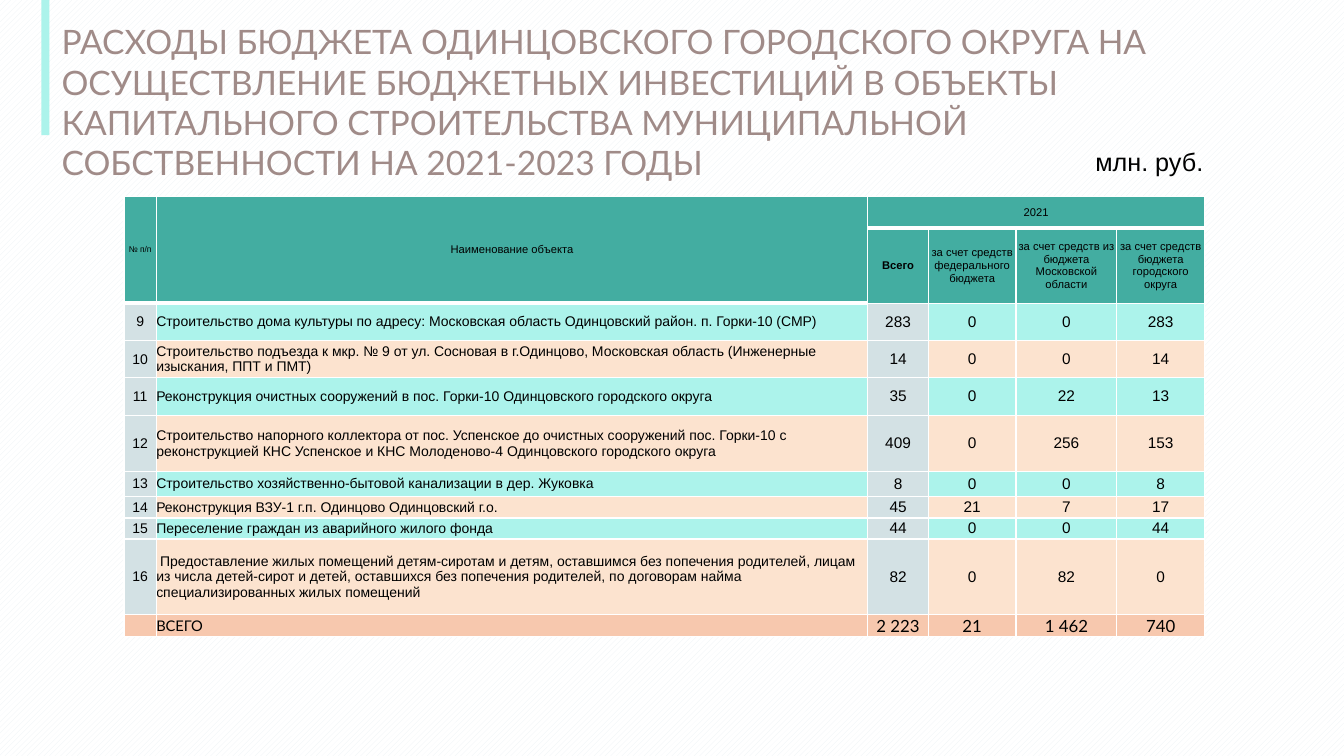
from lxml import etree
from pptx import Presentation
from pptx import util as u
from pptx.dml.color import RGBColor
from pptx.enum import dml, shapes, text
from pptx.oxml import ns

TEAL, MINT, PEACH, GREY, SALMON = "43ADA1", "ACF3EB", "FCE3CF", "D3E1E4", "F7C8AE"
CENTER, LEFT = text.PP_ALIGN.CENTER, text.PP_ALIGN.LEFT

COLUMNS = [2.4, 52.95, 4.5, 6.53, 7.5, 6.53]
HEADER_ROWS = [4.13, 10]
TOTAL_ROW = 2.93
SOURCES = [
    "Всего",
    "за счет средств федерального бюджета",
    "за счет средств из бюджета Московской области",
    "за счет средств бюджета городского округа",
]
FIRST_NUMBER = 9
PROJECTS = [
    (4.93, "Строительство дома культуры по адресу: Московская область Одинцовский район. п. Горки-10 (СМР)",
     "283", "0", "0", "283"),
    (4.93, "Строительство подъезда к мкр. № 9 от ул. Сосновая в г.Одинцово, Московская область "
     "(Инженерные изыскания, ППТ и ПМТ)", "14", "0", "0", "14"),
    (4.93, "Реконструкция очистных сооружений в пос. Горки-10 Одинцовского городского округа",
     "35", "0", "22", "13"),
    (7.47, "Строительство напорного коллектора от пос. Успенское до очистных сооружений пос. Горки-10 "
     "с реконструкцией КНС Успенское и КНС Молоденово-4 Одинцовского городского округа",
     "409", "0", "256", "153"),
    (3.33, "Строительство хозяйственно-бытовой канализации в дер. Жуковка", "8", "0", "0", "8"),
    (2.8, "Реконструкция ВЗУ-1 г.п. Одинцово Одинцовский г.о.", "45", "21", "7", "17"),
    (2.8, "Переселение граждан из аварийного жилого фонда", "44", "0", "0", "44"),
    (10, " Предоставление жилых помещений детям-сиротам и детям, оставшимся без попечения родителей, "
     "лицам из числа детей-сирот и детей, оставшихся без попечения родителей, по договорам найма "
     "специализированных жилых помещений", "82", "0", "82", "0"),
]
TOTALS = ["", "ВСЕГО", "2 223", "21", "1 462", "740"]


def rgb(value):
    return RGBColor.from_string(value)


class SlideBuilder:
    heading_font = "Lato"
    body_font = "Arial"

    def __init__(self, prs):
        self.width, self.height = prs.slide_width, prs.slide_height
        self.s = prs.slides.add_slide(prs.slide_layouts[5])

    def x(self, percent):
        return u.Emu(round(self.width * percent / 100))

    def y(self, percent):
        return u.Emu(round(self.height * percent / 100))

    def box(self, left, top, width, height):
        return self.x(left), self.y(top), self.x(width), self.y(height)

    def background(self, fore, back):
        fill = self.s.background.fill
        fill.patterned()
        fill.pattern = dml.MSO_PATTERN.WIDE_UPWARD_DIAGONAL
        fill.fore_color.rgb, fill.back_color.rgb = rgb(fore), rgb(back)

    def add_words(self, tf, words, size, font=None, color="000000", align=LEFT, bold=False):
        p = tf.paragraphs[0]
        p.alignment = align
        if not words:
            etree.SubElement(p._p, ns.qn("a:endParaRPr"), sz=str(int(size * 100)))
            return
        r = p.add_run()
        r.text = words
        r.font.name = font or self.body_font
        r.font.size = u.Pt(size)
        r.font.bold = bold
        r.font.color.rgb = rgb(color)

    def title(self, words, *place):
        sp = self.s.shapes.title
        sp.left, sp.top, sp.width, sp.height = self.box(*place)
        tf = sp.text_frame
        tf.margin_left = tf.margin_top = 0
        tf.margin_right, tf.margin_bottom = u.Inches(0.1), u.Inches(0.05)
        tf.vertical_anchor = text.MSO_ANCHOR.TOP
        tf.word_wrap = True
        tf.auto_size = text.MSO_AUTO_SIZE.SHAPE_TO_FIT_TEXT
        self.add_words(tf, words, 24, self.heading_font, "A08B88")

    def bar(self, color, *place):
        sp = self.s.shapes.add_shape(shapes.MSO_SHAPE.RECTANGLE, *self.box(*place))
        sp.shadow.inherit = False
        sp.fill.solid()
        sp.fill.fore_color.rgb = rgb(color)
        sp.line.fill.background()

    def note(self, words, *place):
        tf = self.s.shapes.add_textbox(*self.box(*place)).text_frame
        tf.word_wrap = False
        tf.auto_size = text.MSO_AUTO_SIZE.SHAPE_TO_FIT_TEXT
        self.add_words(tf, words, 18, align=CENTER)

    def table(self, left, top, columns, rows):
        place = self.box(left, top, sum(columns), sum(rows))
        table = self.s.shapes.add_table(len(rows), len(columns), *place).table
        table.first_row = table.horz_banding = False
        for column, width in zip(table.columns, columns):
            column.width = self.x(width)
        for row, height in zip(table.rows, rows):
            row.height = self.y(height)
        return table

    def cell(self, cell, words, fill, size, bottom=1, **style):
        cell.margin_left = cell.margin_right = cell.margin_top = cell.margin_bottom = 0
        cell.vertical_anchor = text.MSO_ANCHOR.MIDDLE
        tc_pr = cell._tc.get_or_add_tcPr()
        for side, points in (("L", 1), ("R", 1), ("T", 1), ("B", bottom)):
            ln = etree.SubElement(tc_pr, ns.qn(f"a:ln{side}"), w=str(int(u.Pt(points))))
            solid = etree.SubElement(ln, ns.qn("a:solidFill"))
            etree.SubElement(solid, ns.qn("a:srgbClr"), val="FFFFFF")
        cell.fill.solid()
        cell.fill.fore_color.rgb = rgb(fill)
        self.add_words(cell.text_frame, words, size, **style)


def fill_table(b):
    heights = HEADER_ROWS + [project[0] for project in PROJECTS] + [TOTAL_ROW]
    table = b.table(9.23, 26, COLUMNS, heights)

    for col, (words, size) in enumerate([("№ п/п", 6), ("Наименование объекта", 8), ("2021", 8)]):
        b.cell(table.cell(0, col), words, TEAL, size, bottom=3, align=CENTER)
    for col, words in enumerate(SOURCES, 2):
        b.cell(table.cell(1, col), words, TEAL, 8, align=CENTER, bold=col == 2)
    for col in (0, 1):
        table.cell(0, col).merge(table.cell(1, col))
    table.cell(0, 2).merge(table.cell(0, 5))

    for i, (_, name, *amounts) in enumerate(PROJECTS):
        band = (MINT, PEACH)[i % 2]
        for col, words in enumerate([str(FIRST_NUMBER + i), name, *amounts]):
            b.cell(table.cell(i + 2, col), words, GREY if col in (0, 2) else band,
                   10 if col < 2 else 11, align=LEFT if col == 1 else CENTER)

    for col, words in enumerate(TOTALS):
        b.cell(table.cell(len(heights) - 1, col), words, SALMON, 10.5 if col < 2 else 12,
               font=b.heading_font, align=LEFT if col < 2 else CENTER)


def main():
    prs = Presentation()
    prs.slide_width, prs.slide_height = u.Inches(13.33), u.Inches(7.5)
    b = SlideBuilder(prs)
    b.background("ECF2F4", "FFFFFF")
    b.title("РАСХОДЫ БЮДЖЕТА ОДИНЦОВСКОГО ГОРОДСКОГО ОКРУГА НА ОСУЩЕСТВЛЕНИЕ БЮДЖЕТНЫХ "
            "ИНВЕСТИЦИЙ В ОБЪЕКТЫ КАПИТАЛЬНОГО СТРОИТЕЛЬСТВА МУНИЦИПАЛЬНОЙ СОБСТВЕННОСТИ "
            "НА 2021-2023 ГОДЫ", 4.58, 2.8, 87.85, 16.8)
    b.bar(MINT, 3.08, 0, 0.6, 17.87)
    b.note("млн. руб.", 80.72, 18.67, 9.6, 5.33)
    fill_table(b)
    prs.save("out.pptx")


if __name__ == "__main__":
    main()
